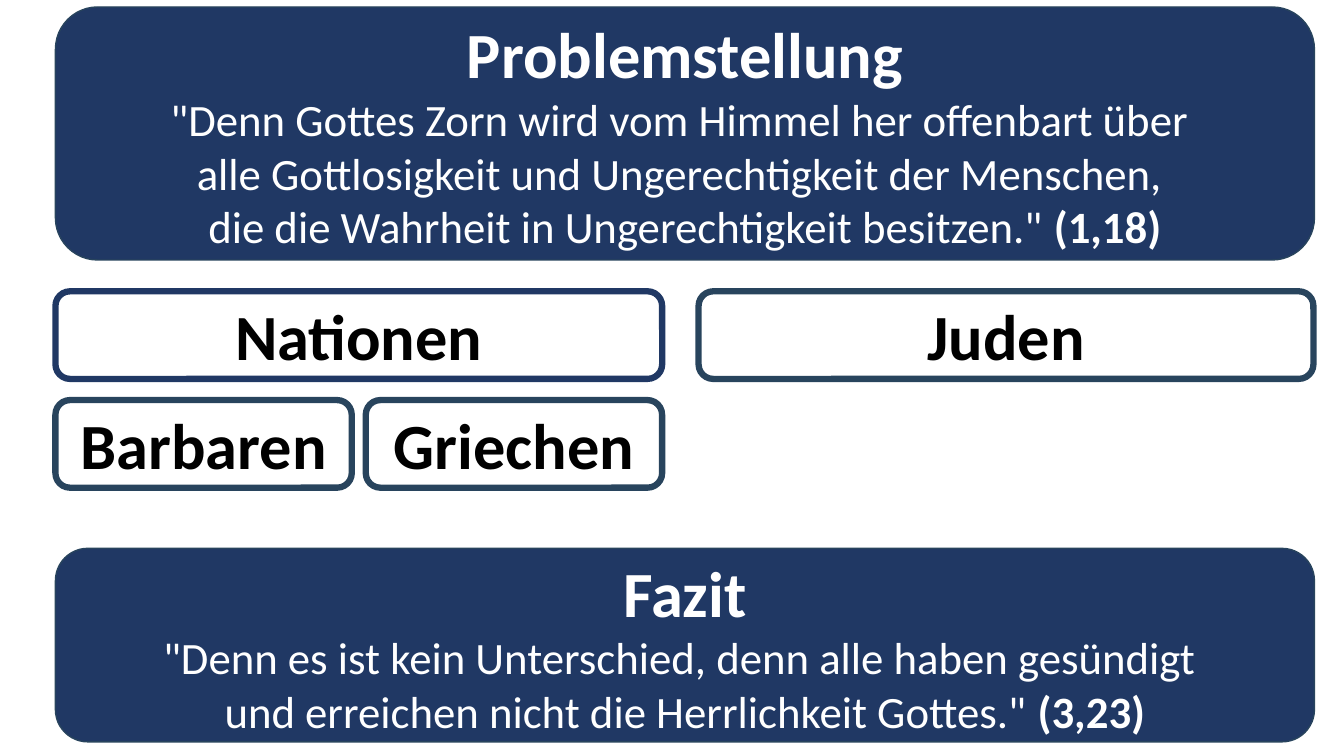
from pptx import Presentation
from pptx.dml.color import RGBColor
from pptx.enum import shapes, text
from pptx.util import Pt

NAVY = RGBColor(0x20, 0x38, 0x64)
SLATE = RGBColor(0x28, 0x44, 0x5D)
WHITE = RGBColor(0xFF, 0xFF, 0xFF)
BLACK = RGBColor(0x00, 0x00, 0x00)

LEFT = 39.6
GROUP_HEIGHT = 62.6
NATIONS_TOP, PEOPLES_TOP = 208.1, 285.8

presentation = Presentation()
presentation.slide_width = Pt(960)
presentation.slide_height = Pt(540)
slide = presentation.slides.add_slide(presentation.slide_layouts[6])


def add_panel(left, top, width, height, fill, outline, outline_width):
    panel = slide.shapes.add_shape(
        shapes.MSO_SHAPE.ROUNDED_RECTANGLE, Pt(left), Pt(top), Pt(width), Pt(height))
    panel.shadow.inherit = False
    panel.fill.solid()
    panel.fill.fore_color.rgb = fill
    panel.line.color.rgb = outline
    panel.line.width = Pt(outline_width)
    panel.text_frame.word_wrap = True
    panel.text_frame.vertical_anchor = text.MSO_ANCHOR.MIDDLE
    return panel.text_frame


def style(paragraph, size, color, bold):
    paragraph.alignment = text.PP_ALIGN.CENTER
    paragraph.font.name = "Calibri"
    paragraph.font.size = Pt(size)
    paragraph.font.color.rgb = color
    paragraph.font.bold = bold


statements = [
    (5, 180.7, "Problemstellung",
     ['"Denn Gottes Zorn wird vom Himmel her offenbart über ',
      "alle Gottlosigkeit und Ungerechtigkeit der Menschen, ",
      'die die Wahrheit in Ungerechtigkeit besitzen." '], "(1,18)"),
    (391.7, 138.2, "Fazit",
     ['"Denn es ist kein Unterschied, denn alle haben gesündigt ',
      'und erreichen nicht die Herrlichkeit Gottes." '], "(3,23)"),
]
for top, height, heading, quote, verse in statements:
    frame = add_panel(LEFT, top, 899.3, height, NAVY, SLATE, 1)
    title = frame.paragraphs[0]
    title.text = heading
    style(title, 46, WHITE, True)
    for quote_line in quote:
        paragraph = frame.add_paragraph()
        paragraph.text = quote_line
        style(paragraph, 32, WHITE, False)
    reference = paragraph.add_run()
    reference.text = verse
    reference.font.bold = True

groups = [
    ("Nationen", LEFT, NATIONS_TOP, 433.4, NAVY),
    ("Juden", 499, NATIONS_TOP, 439.2, SLATE),
    ("Barbaren", LEFT, PEOPLES_TOP, 211.7, SLATE),
    ("Griechen", 261.3, PEOPLES_TOP, 211.7, SLATE),
]
for group, left, top, width, outline in groups:
    frame = add_panel(left, top, width, GROUP_HEIGHT, WHITE, outline, 4.5)
    label = frame.paragraphs[0]
    label.text = group
    style(label, 46, BLACK, True)

presentation.save("out.pptx")
